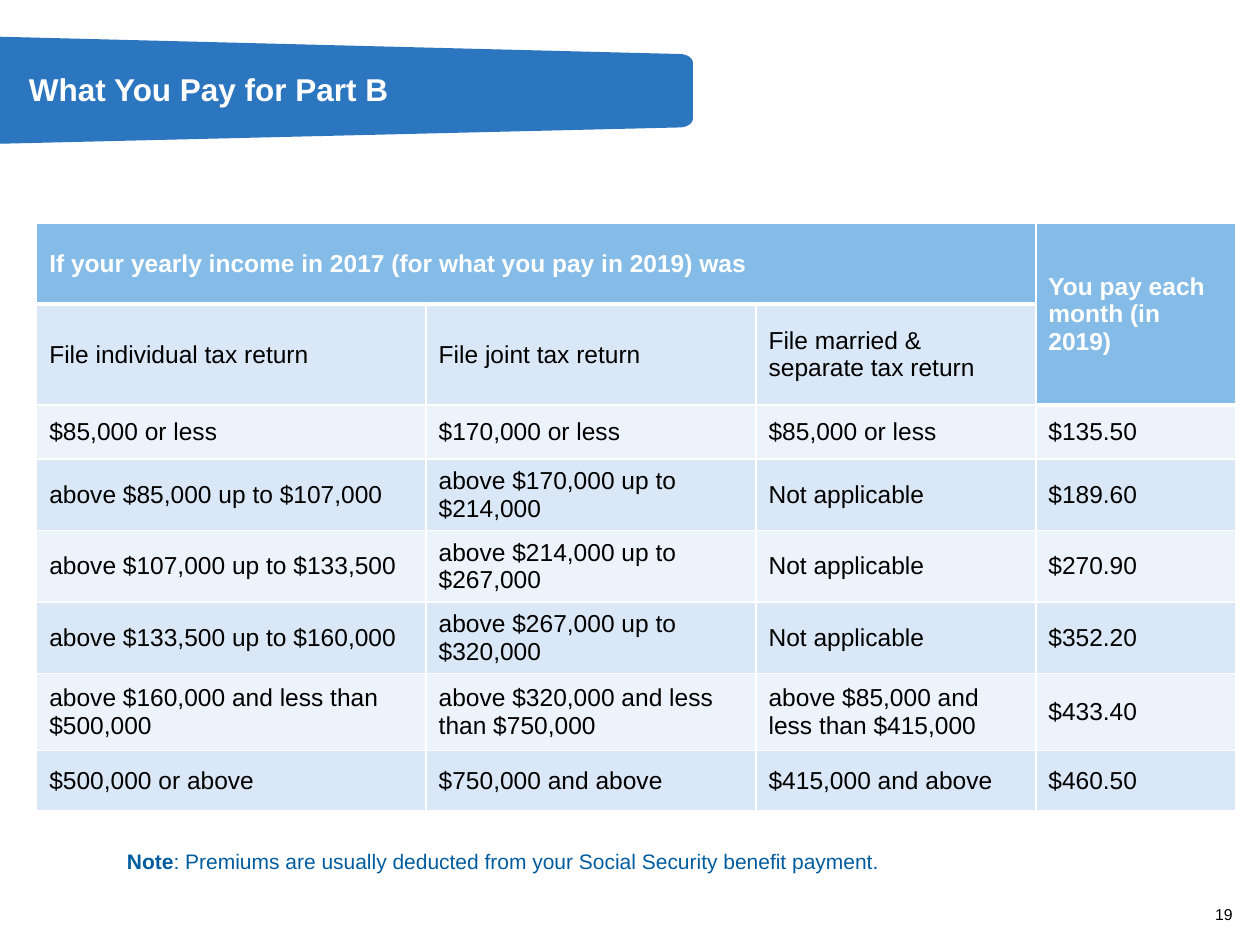
"""Build the slide on Part B monthly payments."""
from dataclasses import dataclass
from math import cos, pi, sin

from lxml import etree
from pptx import Presentation
from pptx.dml.color import RGBColor
from pptx.enum.text import MSO_ANCHOR, MSO_AUTO_SIZE, PP_ALIGN
from pptx.oxml.ns import qn
from pptx.util import Cm, Pt

MIDDLE, BOTTOM = MSO_ANCHOR.MIDDLE, MSO_ANCHOR.BOTTOM
LEFT, RIGHT = PP_ALIGN.LEFT, PP_ALIGN.RIGHT
GROW = MSO_AUTO_SIZE.SHAPE_TO_FIT_TEXT


@dataclass(frozen=True)
class Theme:
    font: str = "Arial"
    white: str = "FFFFFF"
    black: str = "000000"
    banner: str = "2C75BF"
    header: str = "84BCE7"
    dark: str = "D9E7F6"
    light: str = "EDF3FA"
    note: str = "005C9E"
    title_size: int = 18
    table_size: int = 14
    note_size: int = 12
    page_size: int = 9
    thin: int = 1
    thick: int = 3


@dataclass(frozen=True)
class Box:
    left: float
    top: float
    width: float
    height: float

    def lengths(self) -> tuple:
        return Cm(self.left), Cm(self.top), Cm(self.width), Cm(self.height)


@dataclass(frozen=True)
class Row:
    height: float
    texts: tuple


THEME = Theme()
TITLE = Box(0.33, 0.79, 13.64, 2.11)
TABLE = Box(0.74, 4.5, 24.18, 10.85)
NOTE = Box(2.31, 16.99, 21.64, 0.76)
PAGE = Box(24.21, 17.93, 0.89, 0.81)
WIDTHS = (7.85, 6.65, 5.64, 4.04)
ROWS = (
    Row(1.63, ("If your yearly income in 2017 (for what you pay in 2019) was", "", "",
               "You pay each month (in 2019)")),
    Row(1.63, ("File individual tax return", "File joint tax return",
               "File married & separate tax return", "")),
    Row(1.09, ("$85,000 or less", "$170,000 or less", "$85,000 or less", "$135.50")),
    Row(1.24, ("above $85,000 up to $107,000", "above $170,000 up to $214,000",
               "Not applicable", "$189.60")),
    Row(1.24, ("above $107,000 up to $133,500", "above $214,000 up to $267,000",
               "Not applicable", "$270.90")),
    Row(1.24, ("above $133,500 up to $160,000", "above $267,000 up to $320,000",
               "Not applicable", "$352.20")),
    Row(1.55, ("above $160,000 and less than $500,000", "above $320,000 and less than $750,000",
               "above $85,000 and less than $415,000", "$433.40")),
    Row(1.22, ("$500,000 or above", "$750,000 and above", "$415,000 and above", "$460.50")),
)


def set_font(font, size: int, color: str, bold: bool = False) -> None:
    font.name, font.size, font.bold = THEME.font, Pt(size), bold
    font.color.rgb = RGBColor.from_string(color)


def draw_banner(slide) -> None:
    left, bend, right = -0.05, 13.7, 13.97
    turn = [pi / 2 * step / 8 for step in range(9)]
    upper = [(bend + (right - bend) * sin(a), 1.27 - 0.18 * cos(a)) for a in turn]
    lower = [(bend + (right - bend) * cos(a), 2.39 + 0.18 * sin(a)) for a in turn]
    points = [(Cm(x), Cm(y)) for x, y in upper + lower + [(left, 2.9)]]
    form = slide.shapes.build_freeform(Cm(left), Cm(0.74))
    form.add_line_segments(points, close=True)
    shape = form.convert_to_shape()
    shape.shadow.inherit = False
    shape.fill.solid()
    shape.fill.fore_color.rgb = RGBColor.from_string(THEME.banner)
    shape.line.fill.background()
    slide.shapes._spTree.insert(2, shape._element)


def draw_title(slide) -> None:
    title = slide.shapes.title
    title.left, title.top, title.width, title.height = TITLE.lengths()
    title.text_frame.text = "What You Pay for Part B"
    title.text_frame.vertical_anchor = MIDDLE
    para = title.text_frame.paragraphs[0]
    para.alignment, para.line_spacing = LEFT, 0.9
    set_font(para.font, THEME.title_size, THEME.white, True)


def add_frame(slide, box: Box):
    frame = slide.shapes.add_textbox(*box.lengths()).text_frame
    frame.word_wrap = True
    return frame


def draw_page(slide) -> None:
    frame = add_frame(slide, PAGE)
    frame.text, frame.vertical_anchor = "19", BOTTOM
    para = frame.paragraphs[0]
    para.alignment = RIGHT
    set_font(para.font, THEME.page_size, THEME.black)


def draw_note(slide) -> None:
    frame = add_frame(slide, NOTE)
    frame.auto_size = GROW
    words = ("Note", ": Premiums are usually deducted from your Social Security benefit payment.")
    for text, bold in zip(words, (True, False)):
        run = frame.paragraphs[0].add_run()
        run.text = text
        set_font(run.font, THEME.note_size, THEME.note, bold)


def set_borders(cell, top: int, bottom: int) -> None:
    props = cell._tc.get_or_add_tcPr()
    sides = {"L": THEME.thin, "R": THEME.thin, "T": top, "B": bottom}
    for place, (side, weight) in enumerate(sides.items()):
        line = etree.Element(qn(f"a:ln{side}"), w=str(Pt(weight)))
        fill = etree.SubElement(line, qn("a:solidFill"))
        etree.SubElement(fill, qn("a:srgbClr"), val=THEME.white)
        props.insert(place, line)


def is_header(row: int, col: int) -> bool:
    return row == 0 or (row, col) == (1, 3)


def draw_cell(cell, row: int, col: int, text: str) -> None:
    header = is_header(row, col)
    band = THEME.dark if row % 2 else THEME.light
    cell.fill.solid()
    cell.fill.fore_color.rgb = RGBColor.from_string(THEME.header if header else band)
    below = is_header(row - 1, col) and not header
    set_borders(cell, THEME.thick if below else THEME.thin,
                THEME.thick if header else THEME.thin)
    cell.vertical_anchor = MIDDLE
    cell.text = text
    set_font(cell.text_frame.paragraphs[0].font, THEME.table_size,
             THEME.white if header else THEME.black, header)


def draw_table(slide) -> None:
    table = slide.shapes.add_table(len(ROWS), len(WIDTHS), *TABLE.lengths()).table
    for column, width in zip(table.columns, WIDTHS):
        column.width = Cm(width)
    for r, row in enumerate(ROWS):
        table.rows[r].height = Cm(row.height)
        for c, text in enumerate(row.texts):
            draw_cell(table.cell(r, c), r, c, text)
    table.cell(0, 0).merge(table.cell(0, 2))
    table.cell(0, 3).merge(table.cell(1, 3))


def main() -> None:
    deck = Presentation()
    deck.slide_width, deck.slide_height = Cm(25.4), Cm(19.05)
    slide = deck.slides.add_slide(deck.slide_layouts[5])
    draw_banner(slide)
    draw_page(slide)
    draw_title(slide)
    draw_note(slide)
    draw_table(slide)
    deck.save("out.pptx")


if __name__ == "__main__":
    main()
